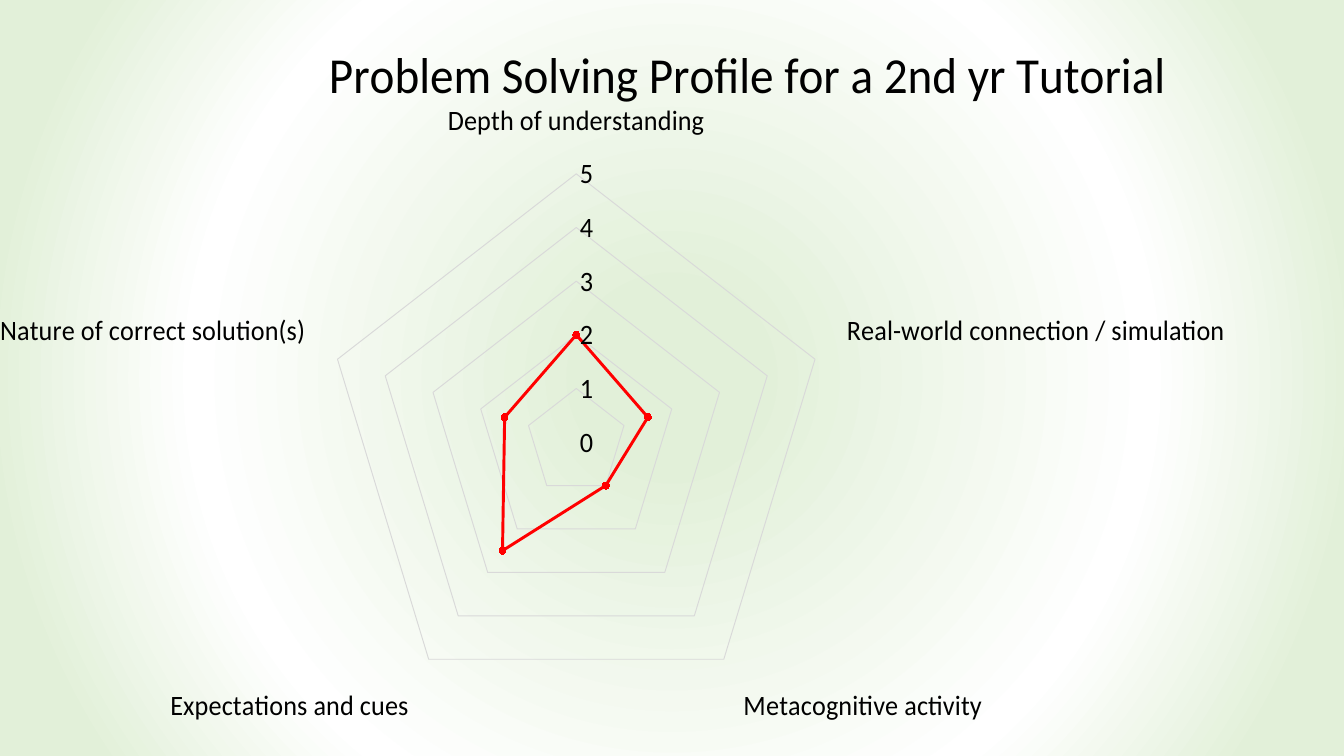
from dataclasses import dataclass

from pptx import Presentation
from pptx.chart.data import CategoryChartData
from pptx.dml.color import RGBColor
from pptx.enum.chart import XL_CHART_TYPE, XL_MARKER_STYLE, XL_TICK_MARK
from pptx.oxml import parse_xml
from pptx.oxml.ns import nsdecls, qn
from pptx.util import Inches, Pt

RADAR = XL_CHART_TYPE.RADAR_MARKERS
CIRCLE = XL_MARKER_STYLE.CIRCLE
NO_TICK = XL_TICK_MARK.NONE


@dataclass(frozen=True)
class Theme:
    font: str = "Calibri"
    text: RGBColor = RGBColor(0, 0, 0)
    grid: RGBColor = RGBColor(0xD9, 0xD9, 0xD9)
    profile: RGBColor = RGBColor(0xFF, 0, 0)
    pale_green: str = "E2F0D9"
    white: str = "FFFFFF"
    title_size: int = 36
    label_size: int = 20
    base_size: int = 10
    grid_width: float = 0.75
    profile_width: float = 2.25
    marker_size: int = 5


THEME = Theme()
TITLE = "Problem Solving Profile for a 2nd yr Tutorial"
PROFILE = {
    "Depth of understanding": 2,
    "Real-world connection / simulation": 1.5,
    "Metacognitive activity": 1,
    "Expectations and cues": 2.5,
    "Nature of correct solution(s)": 1.5,
}


def style_font(font, size):
    font.name = THEME.font
    font.size = Pt(size)
    font.bold = False
    font.color.rgb = THEME.text


def style_line(line, color, width):
    line.color.rgb = color
    line.width = Pt(width)


def set_background(slide):
    """Radial gradient, green at the centre and the rim with white between."""
    fill = slide.background.fill
    fill.gradient()
    gradient = slide.background._cSld.find(".//" + qn("a:gradFill"))
    stops = [(11, THEME.pale_green), (62, THEME.white),
             (89, THEME.pale_green), (100, THEME.pale_green)]
    stop_xml = "".join(
        f'<a:gs pos="{position * 1000}"><a:srgbClr val="{color}"/></a:gs>'
        for position, color in stops)
    radial = parse_xml(
        f'<a:gradFill {nsdecls("a")} rotWithShape="1"><a:gsLst>{stop_xml}</a:gsLst>'
        '<a:path path="circle"><a:fillToRect l="50000" t="50000" r="50000" b="50000"/>'
        '</a:path></a:gradFill>')
    gradient.getparent().replace(gradient, radial)


def place(element, index, target="", **fractions):
    """Give a chart part a fixed place, in fractions of the chart."""
    for automatic in element.findall(qn("c:layout")):
        element.remove(automatic)
    target_xml = f'<c:layoutTarget val="{target}"/>' if target else ""
    modes = "".join(f'<c:{side}Mode val="edge"/>' for side in "xy")
    values = "".join(f'<c:{key} val="{value}"/>' for key, value in fractions.items())
    element.insert(index, parse_xml(
        f'<c:layout {nsdecls("c")}><c:manualLayout>{target_xml}{modes}{values}'
        '</c:manualLayout></c:layout>'))


def style_axis(axis):
    axis.major_tick_mark = axis.minor_tick_mark = NO_TICK
    axis.has_major_gridlines = True
    style_line(axis.major_gridlines.format.line, THEME.grid, THEME.grid_width)
    style_font(axis.tick_labels.font, THEME.label_size)


def add_title(chart):
    chart.has_title = True
    frame = chart.chart_title.text_frame
    frame.text = TITLE
    style_font(frame.paragraphs[0].runs[0].font, THEME.title_size)
    place(chart.chart_title._element, 1, x=0.2, y=0.04)


def add_radar(slide):
    data = CategoryChartData()
    data.categories = list(PROFILE)
    data.add_series("Series 1", list(PROFILE.values()))
    chart = slide.shapes.add_chart(
        RADAR, Inches(0), Inches(0), Inches(12.62), Inches(7.5), data).chart
    chart.has_legend = False
    style_font(chart.font, THEME.base_size)
    add_title(chart)
    place(chart._chartSpace.chart.plotArea, 0, "inner", x=0.2, y=0.23, w=0.43, h=0.71)

    # Axes
    style_axis(chart.category_axis)
    style_line(chart.category_axis.format.line, THEME.grid, THEME.grid_width)
    scores = chart.value_axis
    style_axis(scores)
    scores.format.line.fill.background()
    scores.minimum_scale, scores.maximum_scale, scores.major_unit = 0, 5, 1
    scores.tick_labels.number_format = "General"
    scores.tick_labels.number_format_is_linked = False

    # Profile line
    plot = chart.plots[0]
    plot.vary_by_categories = False
    profile = plot.series[0]
    style_line(profile.format.line, THEME.profile, THEME.profile_width)
    profile.marker.style = CIRCLE
    profile.marker.size = THEME.marker_size
    profile.marker.format.fill.solid()
    profile.marker.format.fill.fore_color.rgb = THEME.profile
    profile.marker.format.line.color.rgb = THEME.profile


def main():
    deck = Presentation()
    deck.slide_width, deck.slide_height = Inches(13.33), Inches(7.5)
    slide = deck.slides.add_slide(deck.slide_layouts[6])
    set_background(slide)
    add_radar(slide)
    deck.save("out.pptx")


if __name__ == "__main__":
    main()
